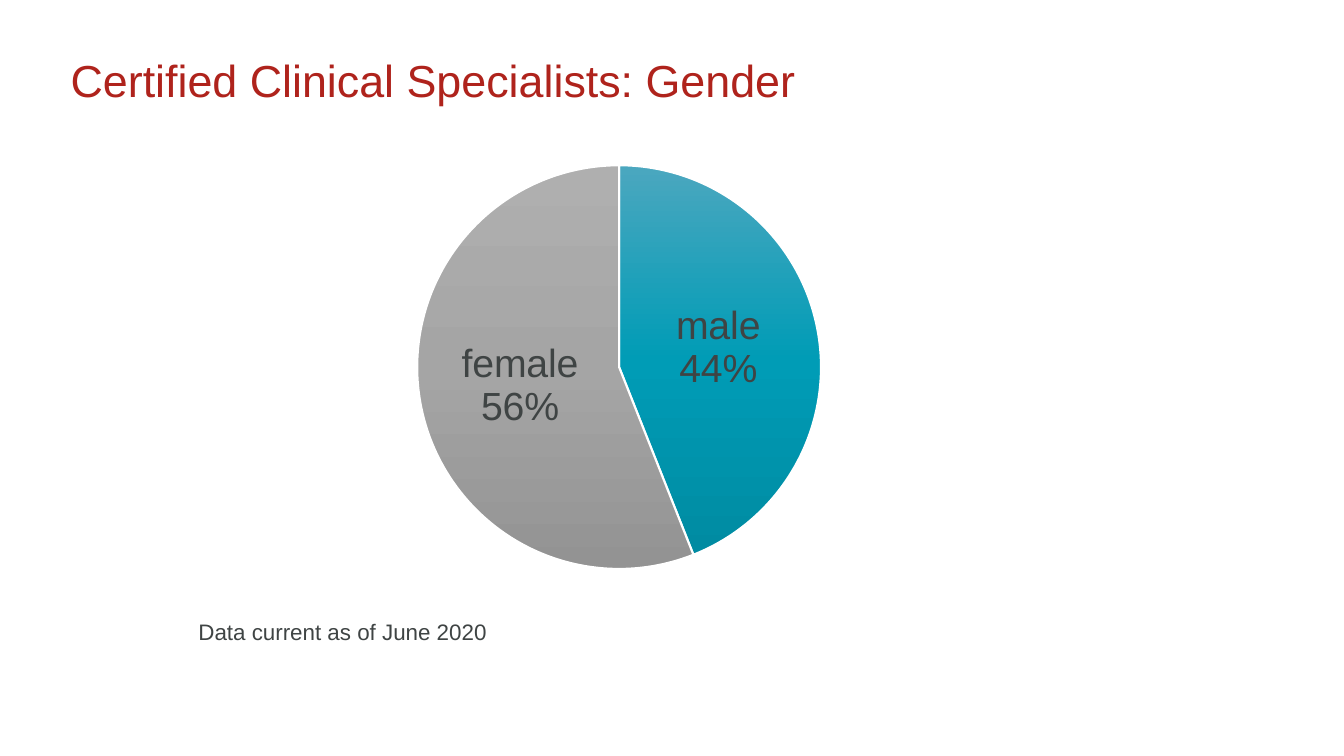
from copy import deepcopy

from pptx import Presentation, util as u
from pptx.chart.data import CategoryChartData
from pptx.dml.color import RGBColor
from pptx.enum import chart as charts, text
from pptx.oxml import parse_xml
from pptx.oxml.ns import nsdecls, qn

FONT = "Arial"
RED, GREY, WHITE = "AF231C", "3F4444", "FFFFFF"
SHARES = {"male": 44, "female": 56}
GRADIENTS = [("4BA7BF", "009CB6", "008BA2"), ("AFAFAF", "A5A5A5", "939393")]


def color(hex_code):
    """Turn a hex string into a colour."""
    return RGBColor.from_string(hex_code)


def inches(box):
    """Convert a box of left, top, width and height to lengths."""
    return [u.Inches(length) for length in box]


def set_font(font, size, hex_code):
    """Apply the slide's typeface with a size and colour."""
    font.name, font.size = FONT, u.Pt(size)
    font.color.rgb = color(hex_code)


def write(frame, words, size, hex_code, spacing=None, wrap=True, margin=None):
    """Write one left-aligned, formatted paragraph into a text frame."""
    frame.word_wrap = wrap
    frame.vertical_anchor = text.MSO_ANCHOR.TOP
    if margin is not None:
        frame.margin_left = frame.margin_right = margin
        frame.margin_top = frame.margin_bottom = margin
    paragraph = frame.paragraphs[0]
    paragraph.alignment = text.PP_ALIGN.LEFT
    paragraph.line_spacing = spacing
    run = paragraph.add_run()
    run.text = words
    set_font(run.font, size, hex_code)


def add_title(slide, box):
    """Place the title in its placeholder."""
    title = slide.shapes.title
    title.left, title.top, title.width, title.height = inches(box)
    write(title.text_frame, "Certified Clinical Specialists: Gender", 32, RED,
          spacing=0.9, margin=0)
    title.text_frame.auto_size = text.MSO_AUTO_SIZE.NONE


def fill_slices(chart):
    """Give each slice a white edge and a vertical three-stop gradient."""
    points = chart.plots[0].series[0].points
    for index, _ in enumerate(GRADIENTS):
        slice_format = points[index].format
        slice_format.fill.gradient()
        slice_format.fill.gradient_angle = 270
        slice_format.line.color.rgb = color(WHITE)
        slice_format.line.width = u.Pt(1.5)
    for stops in chart.element.iter(qn("a:gsLst")):
        stops.insert(1, deepcopy(stops[0]))
    for index, hex_codes in enumerate(GRADIENTS):
        stops = points[index].format.fill.gradient_stops
        for stop, position, hex_code in zip(stops, (0, 0.5, 1), hex_codes):
            stop.position = position
            stop.color.rgb = color(hex_code)


def set_plot_layout(chart, **shares):
    """Fix the inner plot area as shares of the chart's size."""
    values = "".join(f'<c:{key} val="{share}"/>' for key, share in shares.items())
    plot_area = chart.element.find(".//" + qn("c:plotArea"))
    for layout in plot_area.findall(qn("c:layout")):
        plot_area.remove(layout)
    plot_area.insert(0, parse_xml(
        f'<c:layout {nsdecls("c")}><c:manualLayout><c:layoutTarget val="inner"/>'
        f'<c:xMode val="edge"/><c:yMode val="edge"/>{values}'
        '</c:manualLayout></c:layout>'))


def add_labels(plot):
    """Show category and percentage in the middle of each slice."""
    plot.has_data_labels = True
    labels = plot.data_labels
    set_font(labels.font, 28, GREY)
    labels.number_format, labels.number_format_is_linked = "0%", False
    labels.show_value = False
    labels.show_category_name = labels.show_percentage = True
    labels.position = charts.XL_LABEL_POSITION.CENTER
    separator = parse_xml(f'<c:separator {nsdecls("c")}>\n</c:separator>')
    plot_labels = labels.font and plot.chart.element.find(".//" + qn("c:dLbls")) \
        if hasattr(plot, "chart") else None
    if plot_labels is not None:
        plot_labels.find(qn("c:showBubbleSize")).addnext(separator)


def add_pie(slide, box):
    """Place the gender pie chart."""
    data = CategoryChartData()
    data.categories = list(SHARES)
    data.add_series("Series 1", list(SHARES.values()))
    chart = slide.shapes.add_chart(charts.XL_CHART_TYPE.PIE, *inches(box), data).chart
    chart.has_legend = chart.has_title = False
    set_font(chart.font, 10, GREY)
    chart.plots[0].vary_by_categories = True
    fill_slices(chart)
    set_plot_layout(chart, x=0.22, y=0.06, w=0.61, h=0.89)
    add_labels(chart.plots[0])


def add_footnote(slide, box):
    """Place the note on the date of the data."""
    footnote = slide.shapes.add_textbox(*inches(box))
    write(footnote.text_frame, "Data current as of June 2020", 16, GREY, wrap=False)
    footnote.text_frame.auto_size = text.MSO_AUTO_SIZE.SHAPE_TO_FIT_TEXT


def main():
    """Build and save the slide."""
    presentation = Presentation()
    presentation.slide_width, presentation.slide_height = u.Inches(13.33), u.Inches(7.5)
    slide = presentation.slides.add_slide(presentation.slide_layouts[5])
    add_title(slide, (0.7, 0.58, 9.67, 0.58))
    add_pie(slide, (2.66, 1.37, 6.63, 4.5))
    add_footnote(slide, (1.87, 6.08, 3.1, 0.37))
    presentation.save("out.pptx")


if __name__ == "__main__":
    main()
